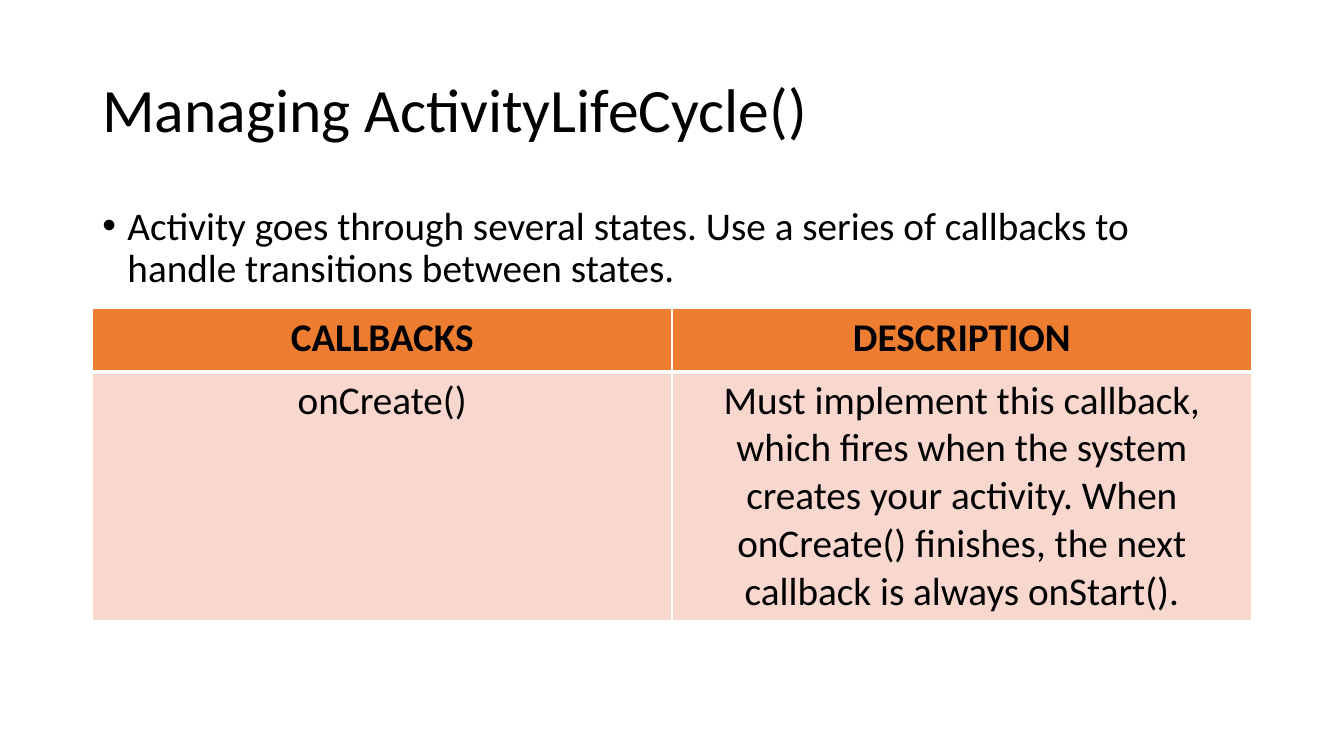
from dataclasses import dataclass

import pptx
import pptx.dml.color
import pptx.enum.text
import pptx.oxml.ns
import pptx.slide
import pptx.table
import pptx.text.text
import pptx.util
from lxml import etree

PX = 9525  # EMU per px, 96 px to the inch
ALIGN = pptx.enum.text.PP_ALIGN
ANCHOR = pptx.enum.text.MSO_ANCHOR


@dataclass(frozen=True)
class Theme:
    font: str = "Calibri"
    ink: str = "000000"
    header: str = "ED7D31"
    body: str = "F8D7CE"
    border: str = "FFFFFF"
    title_pt: int = 44
    text_pt: int = 28
    thin_pt: int = 1
    thick_pt: int = 3


@dataclass(frozen=True)
class TextBlock:
    text: str
    box: tuple[int, int, int, int]
    size: int
    anchor: ANCHOR = ANCHOR.TOP
    bullet: bool = False
    before: int = 0


@dataclass(frozen=True)
class TableRow:
    texts: tuple[str, ...]
    height: int
    fill: str
    bold: bool
    top: int
    bottom: int


THEME = Theme()
LEFT, WIDTH = 88, 1104
TABLE_TOP = 294

BLOCKS = (
    TextBlock("Managing ActivityLifeCycle()", (LEFT, 38, WIDTH, 139),
              THEME.title_pt, anchor=ANCHOR.MIDDLE),
    TextBlock("Activity goes through several states. Use a series of callbacks to "
              "handle transitions between states.", (LEFT, 192, WIDTH, 457),
              THEME.text_pt, bullet=True, before=10),
)

ROWS = (
    TableRow(("CALLBACKS", "DESCRIPTION"), 60, THEME.header, True,
             THEME.thin_pt, THEME.thick_pt),
    TableRow(("onCreate()",
              "Must implement this callback, which fires when the system creates "
              "your activity. When onCreate() finishes, the next callback is "
              "always onStart()."), 237, THEME.body, False,
             THEME.thick_pt, THEME.thin_pt),
)


def px(n: int) -> pptx.util.Emu:
    return pptx.util.Emu(n * PX)


def rgb(code: str) -> pptx.dml.color.RGBColor:
    return pptx.dml.color.RGBColor.from_string(code)


def write(tf: pptx.text.text.TextFrame, text: str, *, size: int, bold: bool = False,
          align: ALIGN = ALIGN.LEFT, spacing: float = 1.0, before: int = 0,
          bullet: bool = False) -> None:
    tf.word_wrap = True
    p = tf.paragraphs[0]
    p.alignment = align
    p.line_spacing = spacing
    p.space_before = pptx.util.Pt(before)
    r = p.add_run()
    r.text = text
    r.font.name = THEME.font
    r.font.size = pptx.util.Pt(size)
    r.font.bold = bold
    r.font.color.rgb = rgb(THEME.ink)
    if bullet:
        pPr = p._p.get_or_add_pPr()
        pPr.set("marL", str(px(24)))
        pPr.set("indent", str(px(-24)))
        etree.SubElement(pPr, pptx.oxml.ns.qn("a:buFont"), typeface="Arial")
        etree.SubElement(pPr, pptx.oxml.ns.qn("a:buChar"), char="•")


def add_block(s: pptx.slide.Slide, block: TextBlock) -> None:
    tf = s.shapes.add_textbox(*map(px, block.box)).text_frame
    tf.vertical_anchor = block.anchor
    write(tf, block.text, size=block.size, spacing=0.9, before=block.before,
          bullet=block.bullet)


def set_borders(cell: pptx.table._Cell, top: int, bottom: int) -> None:
    tcPr = cell._tc.get_or_add_tcPr()
    widths = {"lnL": THEME.thin_pt, "lnR": THEME.thin_pt, "lnT": top, "lnB": bottom}
    for side, width in widths.items():
        ln = etree.SubElement(tcPr, pptx.oxml.ns.qn(f"a:{side}"),
                              w=str(pptx.util.Pt(width)))
        fill = etree.SubElement(ln, pptx.oxml.ns.qn("a:solidFill"))
        etree.SubElement(fill, pptx.oxml.ns.qn("a:srgbClr"), val=THEME.border)


def add_callbacks_table(s: pptx.slide.Slide, rows: tuple[TableRow, ...]) -> None:
    columns = len(rows[0].texts)
    height = sum(row.height for row in rows)
    table = s.shapes.add_table(len(rows), columns, px(LEFT), px(TABLE_TOP),
                               px(WIDTH), px(height)).table
    table.first_row = table.horz_banding = False
    for column in table.columns:
        column.width = px(WIDTH // columns)
    for i, row in enumerate(rows):
        table.rows[i].height = px(row.height)
        for j, text in enumerate(row.texts):
            cell = table.cell(i, j)
            set_borders(cell, row.top, row.bottom)
            cell.fill.solid()
            cell.fill.fore_color.rgb = rgb(row.fill)
            write(cell.text_frame, text, size=THEME.text_pt, bold=row.bold,
                  align=ALIGN.CENTER)


def main() -> None:
    prs = pptx.Presentation()
    prs.slide_width, prs.slide_height = px(1280), px(720)
    s = prs.slides.add_slide(prs.slide_layouts[6])

    # Title and bullet
    for block in BLOCKS:
        add_block(s, block)

    # Callbacks table
    add_callbacks_table(s, ROWS)

    prs.save("out.pptx")


if __name__ == "__main__":
    main()
